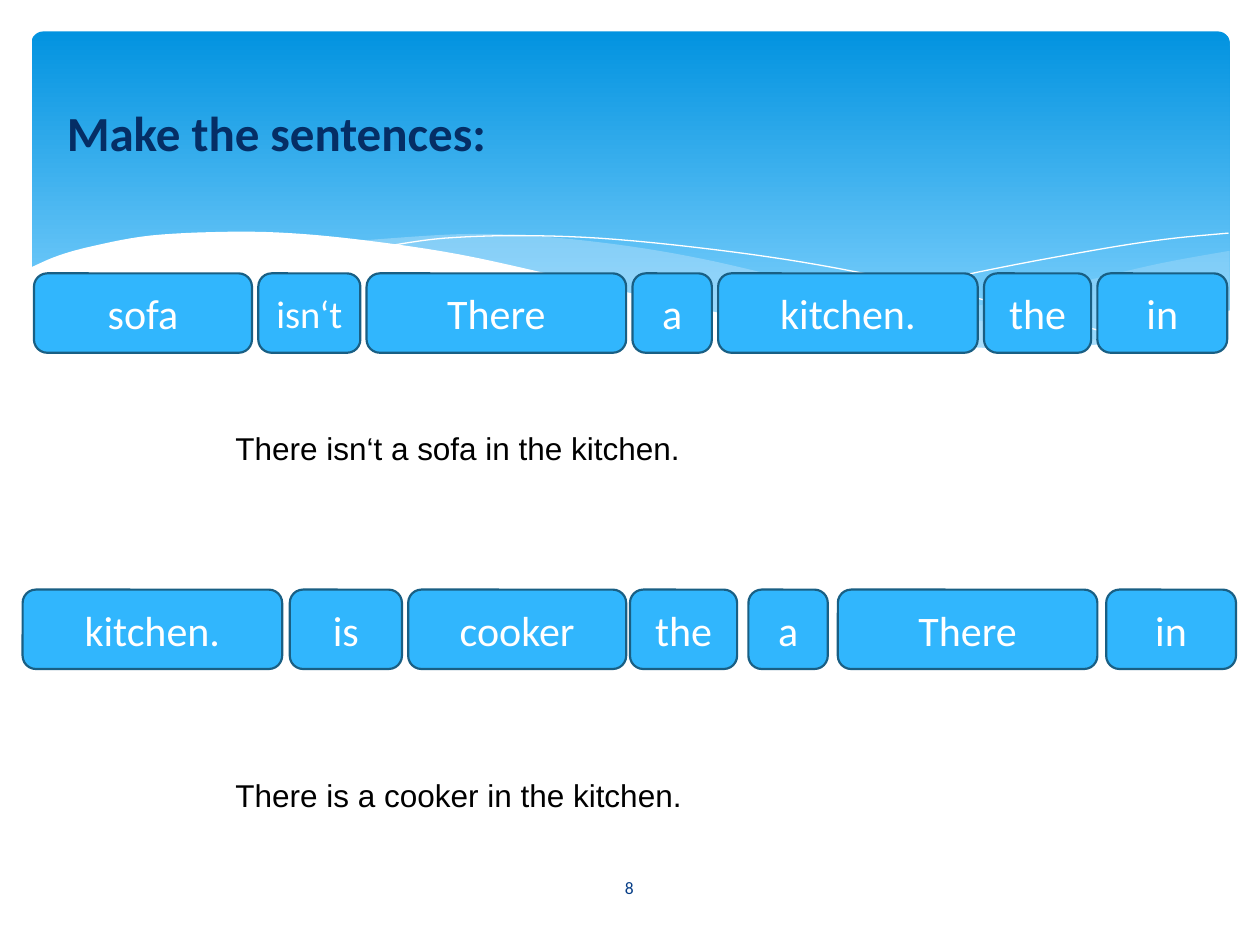
from dataclasses import dataclass

from lxml.etree import SubElement
from pptx import Presentation
from pptx.dml.color import RGBColor
from pptx.enum.shapes import MSO_SHAPE as Shape
from pptx.enum.text import MSO_ANCHOR as Anchor, PP_ALIGN as Align
from pptx.oxml.ns import qn
from pptx.util import Inches, Pt


@dataclass(frozen=True)
class Theme:
    sky_top: str = "0293E0"
    sky_bottom: str = "83D3FE"
    mist: str = "C6E7FC"
    white: str = "FFFFFF"
    tile: str = "31B6FD"
    tile_edge: str = "195F84"
    title: str = "052E65"
    number: str = "073E87"
    answer: str = "000000"
    heading_font: str = "Calibri"
    answer_font: str = "Arial"
    title_size: int = 28
    tile_size: int = 24
    tight_size: int = 22
    answer_size: int = 18
    number_size: int = 10


THEME = Theme()
TITLE = "Make the sentences:"
PAGE = "8"
TILE_HEIGHT = 0.63
TILE_WIDTHS = {"sofa": 1.73, "cooker": 1.73, "There": 2.06, "kitchen.": 2.06,
               "isn‘t": 0.81, "is": 0.89, "a": 0.63, "the": 0.85, "in": 1.03}
TIGHT_WORDS = {"isn‘t"}

# Each exercise: words in order, gap after each word, row origin, answer and its top
EXERCISES = [
    dict(words=["sofa", "isn‘t", "There", "a", "kitchen.", "the", "in"],
         gaps=[0.05] * 7, left=0.27, top=2.17,
         answer="There isn‘t a sofa in the kitchen.", answer_top=3.36),
    dict(words=["kitchen.", "is", "cooker", "the", "a", "There", "in"],
         gaps=[0.06, 0.05, 0.03, 0.09, 0.08, 0.07, 0], left=0.18, top=4.68,
         answer="There is a cooker in the kitchen.", answer_top=6.11),
]

# Filled waves: smooth edges joined by corners, colour, opacity in percent
WAVES = [
    ([[(9.76, 1.99), (9.21, 2.09), (8.61, 2.23), (7.79, 2.42), (6.61, 2.65)],
      [(6.61, 2.65), (7.18, 2.72), (7.81, 2.77), (8.35, 2.77), (8.89, 2.72),
       (9.35, 2.61), (9.76, 2.47)]], THEME.mist, 29),
    ([[(8.93, 2.73), (8.07, 2.6), (7.06, 2.4), (6.29, 2.22), (5.55, 2.05),
       (4.89, 1.94), (4.2, 1.87), (3.61, 1.86), (2.86, 1.91)],
      [(2.86, 1.91), (3.62, 2.03), (4.49, 2.22), (5.3, 2.4), (6.18, 2.58),
       (6.95, 2.7), (7.61, 2.77), (8.18, 2.78), (8.93, 2.73)]], THEME.mist, 40),
]
FOREGROUND_WAVE = (
    [[(9.77, 2.46), (9.3, 2.62), (8.75, 2.73), (8.09, 2.77), (7.26, 2.72),
      (6.47, 2.62), (5.55, 2.45), (4.47, 2.2), (3.65, 2.02), (2.92, 1.91),
      (2.3, 1.85), (1.77, 1.84), (1.19, 1.87), (0.75, 1.95), (0.46, 2.03),
      (0.23, 2.13)],
     [(0.23, 3.29), (9.77, 3.29)]], THEME.white, 100)
CRESTS = [
    [(3.09, 1.95), (3.53, 1.89), (4.16, 1.87), (4.89, 1.9), (5.82, 2),
     (6.65, 2.13), (7.6, 2.33), (8.31, 2.51), (9.07, 2.72)],
    [(6.13, 2.57), (6.95, 2.35), (7.76, 2.16), (8.66, 1.99), (9.24, 1.9), (9.75, 1.85)],
]


def rgb(code):
    return RGBColor.from_string(code)


def smooth(points, steps=6):
    """Trace a Catmull-Rom curve through the points."""
    if len(points) < 3:
        return points
    padded = [points[0], *points, points[-1]]
    curve = [points[0]]
    for a, b, c, d in zip(padded, padded[1:], padded[2:], padded[3:]):
        for t in (i / steps for i in range(1, steps + 1)):
            curve.append(tuple(
                (2 * q + (r - p) * t + (2 * p - 5 * q + 4 * r - s) * t ** 2
                 + (3 * q - p - 3 * r + s) * t ** 3) / 2
                for p, q, r, s in zip(a, b, c, d)))
    return curve


def add_freeform(shapes, edges, close):
    points = [(Inches(x), Inches(y)) for edge in edges for x, y in smooth(edge)]
    builder = shapes.build_freeform(*points[0])
    builder.add_line_segments(points[1:], close=close)
    sp = builder.convert_to_shape()
    sp.shadow.inherit = False
    return sp


def add_wave(shapes, edges, color, opacity):
    sp = add_freeform(shapes, edges, close=True)
    sp.fill.solid()
    sp.fill.fore_color.rgb = rgb(color)
    sp.line.fill.background()
    if opacity < 100:
        clr = next(sp.fill._xPr.iter(qn("a:srgbClr")))
        SubElement(clr, qn("a:alpha"), val=str(opacity * 1000))


def add_crest(shapes, points):
    sp = add_freeform(shapes, [points], close=False)
    sp.fill.background()
    sp.line.color.rgb = rgb(THEME.white)
    sp.line.width = Pt(0)


def add_banner(shapes):
    sp = shapes.add_shape(Shape.ROUNDED_RECTANGLE, *map(Inches, (0.25, 0.25, 9.51, 2.7)))
    sp.adjustments[0] = 0.034
    sp.shadow.inherit = False
    sp.line.fill.background()
    sp.fill.gradient()
    sp.fill.gradient_angle = 270
    stops = ((0, THEME.sky_top), (0.9, THEME.sky_bottom))
    for stop, (position, color) in zip(sp.fill.gradient_stops, stops):
        stop.position = position
        stop.color.rgb = rgb(color)


def write(sp, text, size, color, font=THEME.heading_font, align=Align.LEFT,
          anchor=Anchor.TOP, bold=False):
    tf = sp.text_frame
    tf.word_wrap = True
    tf.vertical_anchor = anchor
    p = tf.paragraphs[0]
    p.text = text
    p.alignment = align
    p.font.name, p.font.size, p.font.bold = font, Pt(size), bold
    p.font.color.rgb = rgb(color)


def add_label(shapes, box, *args, **kwargs):
    write(shapes.add_textbox(*map(Inches, box)), *args, **kwargs)


def add_tile(shapes, word, left, top):
    box = (left, top, TILE_WIDTHS[word], TILE_HEIGHT)
    sp = shapes.add_shape(Shape.ROUNDED_RECTANGLE, *map(Inches, box))
    sp.shadow.inherit = False
    sp.fill.solid()
    sp.fill.fore_color.rgb = rgb(THEME.tile)
    sp.line.color.rgb = rgb(THEME.tile_edge)
    sp.line.width = Pt(1.25)
    size = THEME.tight_size if word in TIGHT_WORDS else THEME.tile_size
    write(sp, word, size, THEME.white, align=Align.CENTER, anchor=Anchor.MIDDLE)


def add_exercise(shapes, words, gaps, left, top, answer, answer_top):
    for word, gap in zip(words, gaps):
        add_tile(shapes, word, left, top)
        left += TILE_WIDTHS[word] + gap
    add_label(shapes, (1.77, answer_top, 6, 0.4), answer, THEME.answer_size,
              THEME.answer, font=THEME.answer_font)


def main():
    prs = Presentation()
    prs.slide_width, prs.slide_height = Inches(10), Inches(7.5)
    s = prs.slides.add_slide(prs.slide_layouts[5])
    shapes = s.shapes

    add_banner(shapes)
    for wave in WAVES:
        add_wave(shapes, *wave)
    for crest in CRESTS:
        add_crest(shapes, crest)
    add_wave(shapes, *FOREGROUND_WAVE)

    title = shapes.title
    title.left, title.top, title.width, title.height = map(Inches, (0.43, 0.76, 3.62, 0.57))
    write(title, TITLE, THEME.title_size, THEME.title, bold=True)
    shapes._spTree.append(title._element)  # bring the title in front of the banner

    for exercise in EXERCISES:
        add_exercise(shapes, **exercise)
    add_label(shapes, (4.36, 6.84, 1.27, 0.4), PAGE, THEME.number_size, THEME.number,
              align=Align.CENTER, anchor=Anchor.MIDDLE)
    prs.save("out.pptx")


if __name__ == "__main__":
    main()
